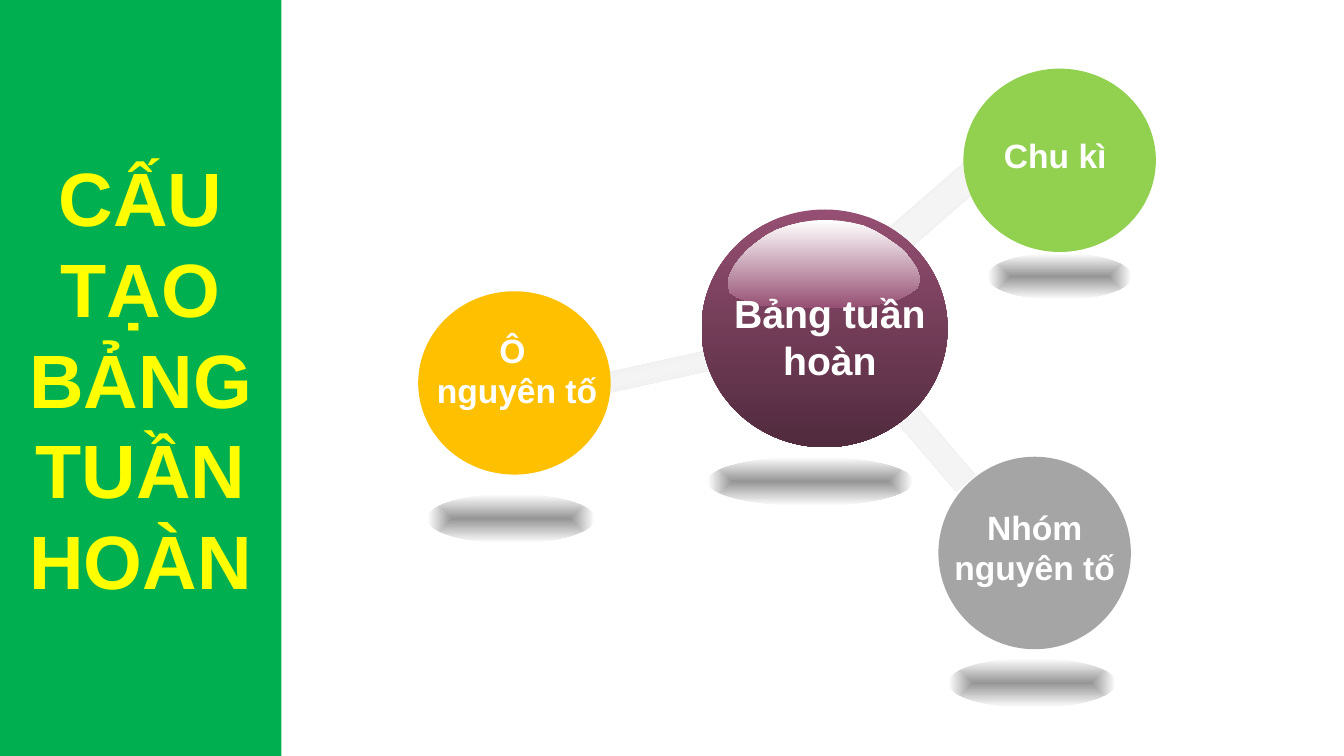
from lxml import etree
from pptx import Presentation, util as u
from pptx.dml.color import RGBColor
from pptx.enum import shapes, text
from pptx.oxml import ns

WHITE = RGBColor(0xFF, 0xFF, 0xFF)
GREEN = RGBColor(0x00, 0xB0, 0x50)
YELLOW = RGBColor(0xFF, 0xFF, 0x00)
LIME = RGBColor(0x92, 0xD0, 0x50)
AMBER = RGBColor(0xFF, 0xC0, 0x00)
GREY = RGBColor(0xA5, 0xA5, 0xA5)
PLUM = RGBColor(0x95, 0x4F, 0x72)
DARK = RGBColor(0x51, 0x2B, 0x3E)
SILVER = RGBColor(0xE7, 0xE6, 0xE6)
PALE = RGBColor(0xF4, 0xF4, 0xF4)
SHADE = RGBColor(0x96, 0x96, 0x96)

OVAL = shapes.MSO_SHAPE.OVAL
RECT = shapes.MSO_SHAPE.RECTANGLE


def paint(item, *tones, round=False):
    """Fill with one colour, or a gradient of evenly spaced colours."""
    item.shadow.inherit = False
    item.line.fill.background()
    item.fill.solid()
    item.fill.fore_color.rgb = tones[0]
    if len(tones) == 1:
        return
    props = item._element.spPr
    grad = etree.Element(ns.qn("a:gradFill"), rotWithShape="1")
    stops = etree.SubElement(grad, ns.qn("a:gsLst"))
    for i, tone in enumerate(tones):
        pos = str(100000 * i // (len(tones) - 1))
        stop = etree.SubElement(stops, ns.qn("a:gs"), pos=pos)
        etree.SubElement(stop, ns.qn("a:srgbClr"), val=str(tone))
    if round:
        way = etree.SubElement(grad, ns.qn("a:path"), path="shape")
        etree.SubElement(way, ns.qn("a:fillToRect"),
                         l="50000", t="50000", r="50000", b="50000")
    else:
        etree.SubElement(grad, ns.qn("a:lin"), ang="5400000", scaled="1")
    props.replace(props.find(ns.qn("a:solidFill")), grad)


def write(frame, lines, size, tone):
    """Put centred bold lines into a text frame."""
    frame.text = lines
    for para in frame.paragraphs:
        para.alignment = text.PP_ALIGN.CENTER
        para.font.name = "Arial"
        para.font.size = u.Pt(size)
        para.font.bold = True
        para.font.color.rgb = tone


deck = Presentation()
deck.slide_width, deck.slide_height = u.Cm(33.87), u.Cm(19.05)
slide = deck.slides.add_slide(deck.slide_layouts[5])
board = slide.shapes

# Title sidebar
title = board.title
title.left, title.top = u.Cm(0), u.Cm(0)
title.width, title.height = u.Cm(7.09), deck.slide_height
title.fill.solid()
title.fill.fore_color.rgb = GREEN
write(title.text_frame, "CẤU TẠO BẢNG TUẦN HOÀN", 54, YELLOW)
title.text_frame.auto_size = text.MSO_AUTO_SIZE.NONE
title.text_frame.vertical_anchor = text.MSO_ANCHOR.MIDDLE

# Bars from the hub to the balls
bars = [
    (21.44, 10.52, 3.51, 0.64, 229.5),
    (15.29, 9.04, 3.23, 0.51, 347.6),
    (21.44, 5.13, 3.61, 0.74, 319),
]
for *box, turn in bars:
    bar = board.add_shape(RECT, *map(u.Cm, box))
    bar.rotation = turn
    paint(bar, SILVER, PALE, SILVER)

# Hub with its gloss
hub = board.add_shape(OVAL, u.Cm(17.68), u.Cm(5.28), u.Cm(6.2), u.Cm(5.99))
paint(hub, PLUM, DARK)
rim = [
    (23.11, 6.78), (23.19, 7.04), (23.11, 7.26), (22.89, 7.42), (22.56, 7.57),
    (22.12, 7.67), (21.62, 7.72), (21.26, 7.75), (20.07, 7.75), (19.61, 7.72),
    (19.2, 7.7), (18.85, 7.59), (18.57, 7.49), (18.39, 7.37), (18.34, 7.11),
    (18.39, 6.93), (18.52, 6.68), (18.67, 6.48), (18.87, 6.27), (19.08, 6.1),
    (19.33, 5.92), (19.58, 5.79), (19.86, 5.69), (20.17, 5.61), (20.47, 5.56),
    (20.78, 5.54), (21.13, 5.56), (21.44, 5.61), (21.77, 5.69), (22.05, 5.82),
    (22.3, 5.97), (22.56, 6.15), (22.78, 6.32), (22.96, 6.55),
]
dots = [(u.Cm(x), u.Cm(y)) for x, y in rim]
pen = board.build_freeform(*dots[0])
pen.add_line_segments(dots[1:], close=True)
paint(pen.convert_to_shape(), WHITE, PLUM)

# Balls
balls = [
    (24.28, 1.73, 4.62, LIME),
    (10.54, 7.34, 4.62, AMBER),
    (23.65, 11.51, 4.85, GREY),
]
for x, y, high, tone in balls:
    ball = board.add_shape(OVAL, u.Cm(x), u.Cm(y), u.Cm(4.85), u.Cm(high))
    paint(ball, tone)

# Labels
labels = [
    ("Bảng tuần\nhoàn", 28, (18.21, 7.16, 5.41, 2.64)),
    ("Chu kì", 24, (24.41, 3.28, 4.37, 1.3)),
    ("Ô \nnguyên tố", 24, (10.54, 8.18, 4.98, 2.31)),
    ("Nhóm nguyên tố", 24, (23.52, 12.65, 5.11, 2.31)),
]
for words, size, box in labels:
    label = board.add_textbox(*map(u.Cm, box))
    label.text_frame.word_wrap = True
    write(label.text_frame, words, size, WHITE)

# Soft shadows on the floor
floor = [
    (10.77, 12.45, 4.22, 1.24),
    (17.83, 11.51, 5.18, 1.24),
    (23.9, 16.59, 4.22, 1.24),
    (24.89, 6.38, 3.63, 1.17),
]
for box in floor:
    paint(board.add_shape(OVAL, *map(u.Cm, box)), SHADE, WHITE, round=True)

deck.save("out.pptx")
